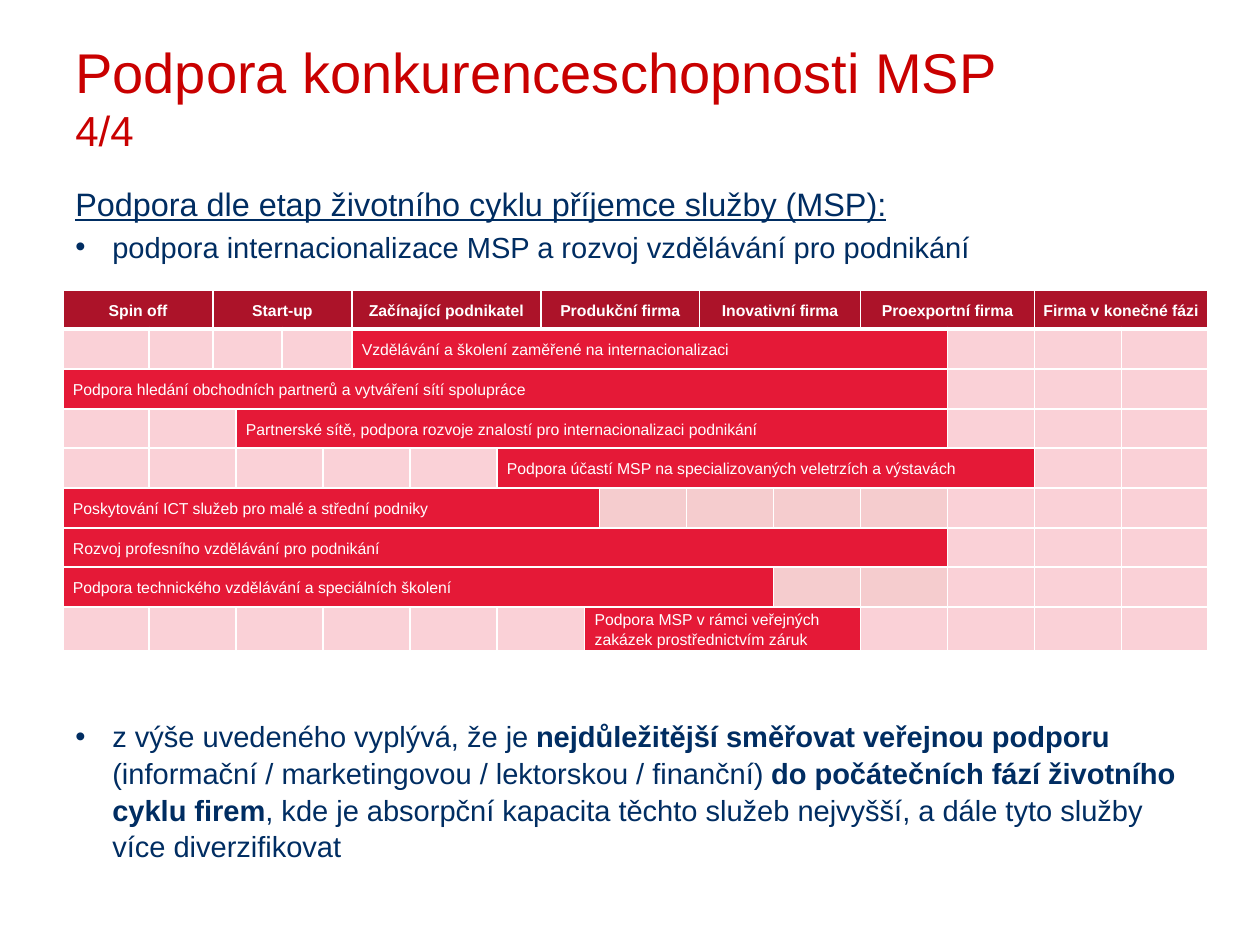
"""Build the slide on support for SME competitiveness by life-cycle stage."""
from lxml import etree
from pptx import Presentation
from pptx.dml.color import RGBColor
from pptx.enum.text import MSO_ANCHOR, PP_ALIGN
from pptx.oxml.ns import qn
from pptx.util import Pt

PX = 914400 / 126
MIDDLE, TOP = MSO_ANCHOR.MIDDLE, MSO_ANCHOR.TOP
CENTER, LEFT = PP_ALIGN.CENTER, PP_ALIGN.LEFT
RED = RGBColor(0xC9, 0x00, 0x00)
NAVY = RGBColor(0x00, 0x2D, 0x62)
WHITE = RGBColor(0xFF, 0xFF, 0xFF)
HEADER = RGBColor(0xAC, 0x13, 0x29)
BAR = RGBColor(0xE5, 0x19, 0x37)
PINK = RGBColor(0xFA, 0xD1, 0xD7)
BEIGE = RGBColor(0xF5, 0xCC, 0xCE)

COLUMNS = [86, 64, 23, 46, 41, 29, 58, 87, 44, 44, 14, 87, 13, 74, 87, 87, 87, 87, 86]
TABLE_HEIGHT = 357
STAGES = [
    ("Spin off", 2), ("Start-up", 4), ("Začínající podnikatel", 3), ("Produkční firma", 4),
    ("Inovativní firma", 2), ("Proexportní firma", 2), ("Firma v konečné fázi", 2),
]
# Each service: spans before the bar, label, bar span, beige spans, pink spans after
SERVICES = [
    ([1, 1, 2, 2], "Vzdělávání a školení zaměřené na internacionalizaci", 10, [], [1] * 3),
    ([], "Podpora hledání obchodních partnerů a vytváření sítí spolupráce", 16, [], [1] * 3),
    ([1, 2], "Partnerské sítě, podpora rozvoje znalostí pro internacionalizaci podnikání",
     13, [], [1] * 3),
    ([1, 2, 2, 2, 1], "Podpora účastí MSP na specializovaných veletrzích a výstavách",
     9, [], [1] * 2),
    ([], "Poskytování ICT služeb pro malé a střední podniky", 11, [1, 2, 1, 1], [1] * 3),
    ([], "Rozvoj profesního vzdělávání pro podnikání", 16, [], [1] * 3),
    ([], "Podpora technického vzdělávání a speciálních školení", 14, [1, 1], [1] * 3),
    ([1, 2, 2, 2, 1, 2], "Podpora MSP v rámci veřejných zakázek prostřednictvím záruk",
     5, [], [1] * 4),
]


def write(paragraph, text, size=16.6, color=NAVY, bold=False, underline=False):
    run = paragraph.add_run()
    run.text = text
    run.font.name = "Arial"
    run.font.size = Pt(size)
    run.font.color.rgb = color
    run.font.bold = bold
    run.font.underline = underline


def add_bullet(paragraph):
    properties = paragraph._p.get_or_add_pPr()
    properties.set("marL", str(round(37 * PX)))
    properties.set("indent", str(round(-37 * PX)))
    font = etree.SubElement(properties, qn("a:buFont"))
    font.set("typeface", "Arial")
    etree.SubElement(properties, qn("a:buChar")).set("char", "•")


presentation = Presentation()
presentation.slide_width = round(1260 * PX)
presentation.slide_height = round(945 * PX)
slide = presentation.slides.add_slide(presentation.slide_layouts[6])

frames = []
for top, width, height, anchor in [
    (38, 1133, 117, MIDDLE), (178, 1134, 95, TOP), (711, 1134, 150, TOP),
]:
    shape = slide.shapes.add_textbox(*[round(n * PX) for n in (63, top, width, height)])
    shape.text_frame.word_wrap = True
    shape.text_frame.vertical_anchor = anchor
    frames.append(shape.text_frame)
title, intro, conclusion = frames

paragraph = title.paragraphs[0]
write(paragraph, "Podpora konkurenceschopnosti MSP", size=32, color=RED)
paragraph.add_line_break()
write(paragraph, "4/4", size=24, color=RED)

write(intro.paragraphs[0], "Podpora dle etap životního cyklu příjemce služby (MSP):",
      size=18.5, underline=True)
paragraph = intro.add_paragraph()
add_bullet(paragraph)
paragraph.space_before = Pt(3.5)
write(paragraph, "podpora internacionalizace MSP a rozvoj vzdělávání pro podnikání")

paragraph = conclusion.paragraphs[0]
add_bullet(paragraph)
paragraph.line_spacing = 1.05
for text, bold in [
    ("z výše uvedeného vyplývá, že je ", False),
    ("nejdůležitější směřovat veřejnou podporu ", True),
    ("(informační / marketingovou / lektorskou / finanční) ", False),
    ("do počátečních fází životního cyklu firem", True),
    (", kde je absorpční kapacita těchto služeb nejvyšší, a dále tyto služby více diverzifikovat",
     False),
]:
    write(paragraph, text, bold=bold)

grid = [[(span, label, HEADER) for label, span in STAGES]]
for before, label, bar_span, beige, after in SERVICES:
    grid.append([(span, "", PINK) for span in before] + [(bar_span, label, BAR)]
                + [(span, "", BEIGE) for span in beige] + [(span, "", PINK) for span in after])

table = slide.shapes.add_table(
    len(grid), len(COLUMNS), *[round(n * PX) for n in (63, 290, sum(COLUMNS), TABLE_HEIGHT)]
).table
for column, width in zip(table.columns, COLUMNS):
    column.width = round(width * PX)

for row_index, row in enumerate(grid):
    edges = [TABLE_HEIGHT * n // len(grid) for n in (row_index, row_index + 1)]
    table.rows[row_index].height = round((edges[1] - edges[0]) * PX)
    column_index = 0
    for span, label, fill in row:
        is_header = fill == HEADER
        for offset in range(span):
            cell = table.cell(row_index, column_index + offset)
            cell.margin_left = round(10 * PX) if fill == BAR else 0
            cell.margin_right = cell.margin_top = cell.margin_bottom = 0
            cell.vertical_anchor = MIDDLE
            for side in "LRTB":
                line = etree.SubElement(cell._tc.get_or_add_tcPr(), qn("a:ln" + side))
                line.set("w", str(Pt(3 if is_header and side == "B" else 1)))
                solid = etree.SubElement(line, qn("a:solidFill"))
                etree.SubElement(solid, qn("a:srgbClr")).set("val", str(WHITE))
            cell.fill.solid()
            cell.fill.fore_color.rgb = fill
        cell = table.cell(row_index, column_index)
        if span > 1:
            cell.merge(table.cell(row_index, column_index + span - 1))
        if label:
            paragraph = cell.text_frame.paragraphs[0]
            paragraph.alignment = CENTER if is_header else LEFT
            paragraph.line_spacing = 1.15
            write(paragraph, label, size=9, color=WHITE, bold=is_header)
        column_index += span

presentation.save("out.pptx")
